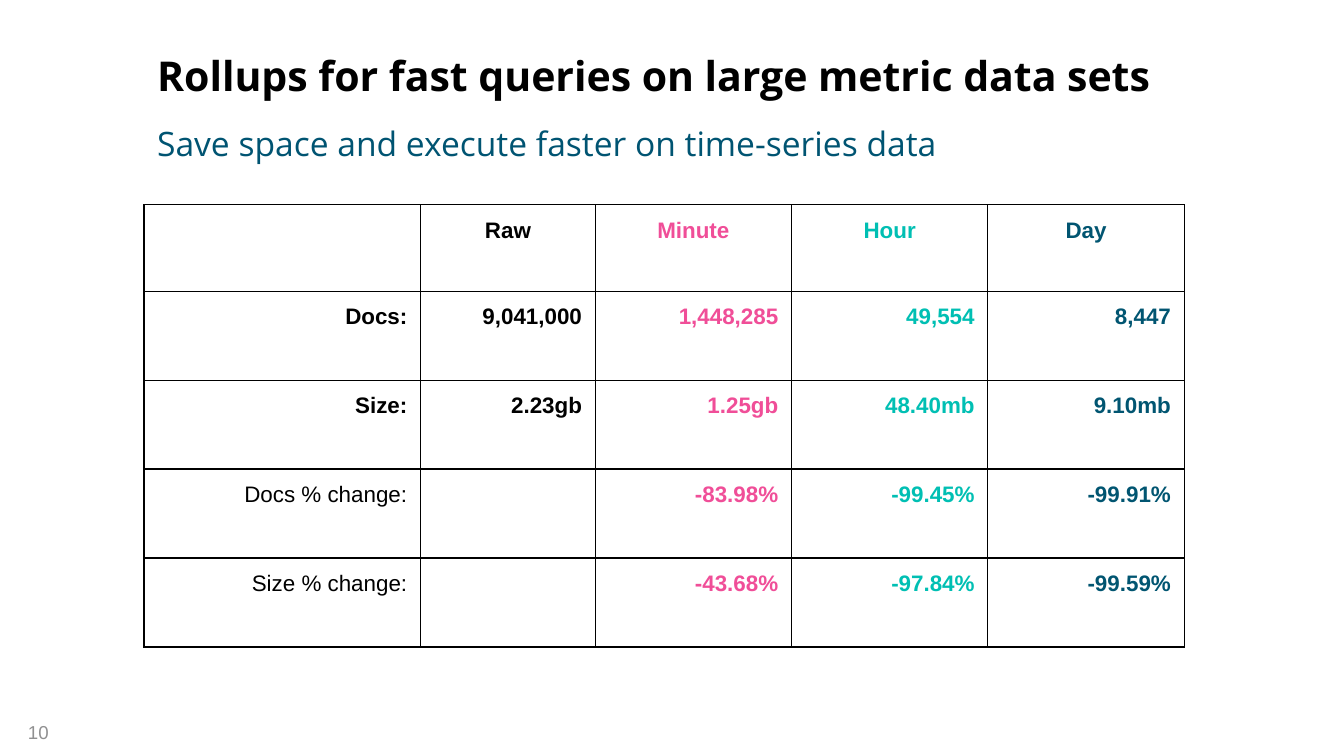
"""Build the slide on rollups, with a table comparing raw and rolled-up metric data."""
from pptx import Presentation, oxml, util as u
from pptx.dml.color import RGBColor
from pptx.enum import text
from pptx.oxml import ns

COLORS = {"black": "000000", "white": "FFFFFF", "subtitle": "005472", "number": "909091",
          "minute": "F04E98", "hour": "00BFB3", "day": "015571"}
INSET = u.Cm(0.25)


def write(frame, words, font, size, color, bold=False, align=text.PP_ALIGN.LEFT):
    frame.text = words
    paragraph = frame.paragraphs[0]
    paragraph.alignment = align
    paragraph.font.name = font
    paragraph.font.size = u.Pt(size)
    paragraph.font.bold = bold
    paragraph.font.color.rgb = RGBColor.from_string(COLORS[color])


def set_frame(frame, anchor, inset_y):
    frame.word_wrap = True
    frame.auto_size = text.MSO_AUTO_SIZE.NONE
    frame.vertical_anchor = anchor
    frame.margin_left = frame.margin_right = INSET
    frame.margin_top = frame.margin_bottom = inset_y


deck = Presentation()
deck.slide_width, deck.slide_height = u.Cm(25.4), u.Cm(14.28)
slide = deck.slides.add_slide(deck.slide_layouts[5])

title = slide.shapes.title
title.left, title.top, title.width, title.height = u.Cm(2.72), u.Cm(0.69), u.Cm(21.87), u.Cm(1.45)
set_frame(title.text_frame, text.MSO_ANCHOR.BOTTOM, INSET)
write(title.text_frame, "Rollups for fast queries on large metric data sets", "Open Sans", 22, "black", True)
title.text_frame.paragraphs[0].line_spacing = 0.85

subtitle = slide.shapes.add_textbox(u.Cm(2.72), u.Cm(2.13), u.Cm(20.22), u.Cm(1.14))
set_frame(subtitle.text_frame, text.MSO_ANCHOR.MIDDLE, INSET)
write(subtitle.text_frame, "Save space and execute faster on time-series data", "Open Sans", 18, "subtitle")

page_number = slide.shapes.add_textbox(u.Cm(0.28), u.Cm(13.49), u.Cm(2.79), u.Cm(0.76))
set_frame(page_number.text_frame, text.MSO_ANCHOR.TOP, u.Cm(0.13))
write(page_number.text_frame, "10", "Arial", 10, "number")

measurements = [
    ["", "Raw", "Minute", "Hour", "Day"],
    ["Docs:", "9,041,000", "1,448,285", "49,554", "8,447"],
    ["Size:", "2.23gb", "1.25gb", "48.40mb", "9.10mb"],
    ["Docs % change:", "", "-83.98%", "-99.45%", "-99.91%"],
    ["Size % change:", "", "-43.68%", "-97.84%", "-99.59%"],
]
column_widths = [5.23, 3.3, 3.71, 3.71, 3.71]
row_heights = [1.63] + [1.68] * 4
column_colors = ["black", "black", "minute", "hour", "day"]

comparison = slide.shapes.add_table(5, 5, u.Cm(2.72), u.Cm(3.87), u.Cm(sum(column_widths)),
                                    u.Cm(sum(row_heights))).table
for column, width in zip(comparison.columns, column_widths):
    column.width = u.Cm(width)
for row, height in zip(comparison.rows, row_heights):
    row.height = u.Cm(height)

for r, values in enumerate(measurements):
    for c, value in enumerate(values):
        cell = comparison.cell(r, c)
        cell.margin_left = cell.margin_right = cell.margin_top = cell.margin_bottom = INSET
        for side in "LRTB":
            cell._tc.get_or_add_tcPr().append(oxml.parse_xml(
                f'<a:ln{side} {ns.nsdecls("a")} w="{u.Pt(0.75)}"><a:solidFill>'
                f'<a:srgbClr val="{COLORS["black"]}"/></a:solidFill></a:ln{side}>'))
        cell.fill.solid()
        cell.fill.fore_color.rgb = RGBColor.from_string(COLORS["white"])
        if value:
            write(cell.text_frame, value, "Arial", 12, column_colors[c], "change" not in value,
                  text.PP_ALIGN.RIGHT if r else text.PP_ALIGN.CENTER)

deck.save("out.pptx")
